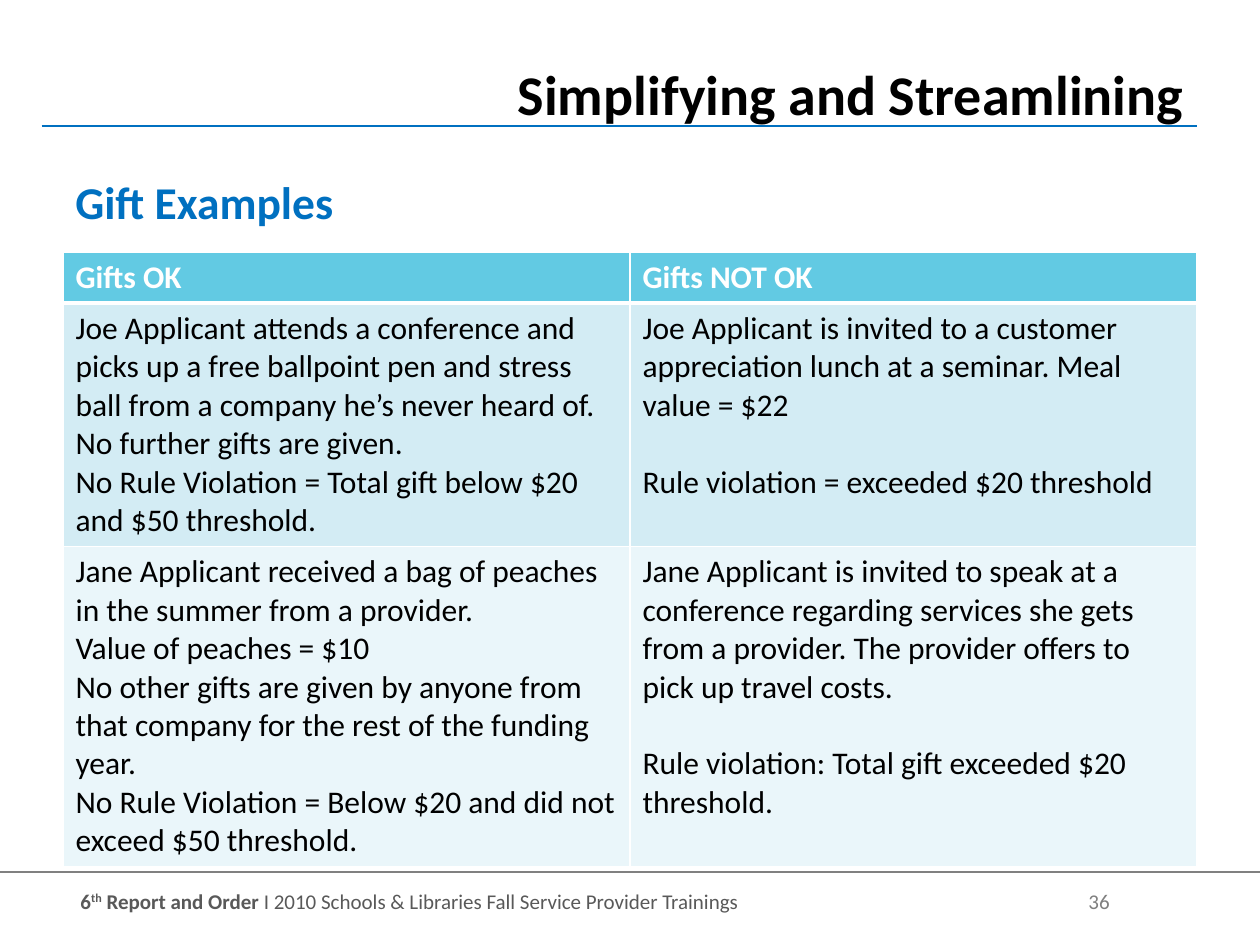
from dataclasses import dataclass

from lxml import etree
from pptx import Presentation
from pptx.dml.color import RGBColor
from pptx.enum.shapes import MSO_CONNECTOR
from pptx.enum.text import MSO_ANCHOR, MSO_AUTO_SIZE, PP_ALIGN
from pptx.oxml.ns import qn
from pptx.util import Inches, Pt

STRAIGHT = MSO_CONNECTOR.STRAIGHT
TOP = MSO_ANCHOR.TOP
NO_AUTOFIT = MSO_AUTO_SIZE.NONE
LEFT, RIGHT = PP_ALIGN.LEFT, PP_ALIGN.RIGHT
TITLE_ONLY = 5


@dataclass(frozen=True)
class Theme:
    font: str = "Calibri"
    black: str = "000000"
    white: str = "FFFFFF"
    blue: str = "0070C0"
    gray: str = "808080"
    dark_gray: str = "595959"
    row_fills: tuple = ("62CAE3", "D3ECF4", "EAF6FA")
    title_size: int = 32
    subtitle_size: int = 26
    table_size: int = 18
    footer_size: int = 12
    paragraph_gap: int = 22


THEME = Theme()

TITLE = "Simplifying and Streamlining"
SUBTITLE = "Gift Examples"

# Each cell is a list of blocks set apart by a gap; each block lists its paragraphs.
TABLE_ROWS = [
    ([["Gifts OK"]], [["Gifts NOT OK"]]),
    (
        [["Joe Applicant attends a conference and picks up a free ballpoint pen and "
          "stress ball from a company he’s never heard of. No further gifts are given.",
          "No Rule Violation = Total gift below $20 and $50 threshold."]],
        [["Joe Applicant is invited to a customer appreciation lunch at a seminar. "
          "Meal value = $22"],
         ["Rule violation = exceeded $20 threshold"]],
    ),
    (
        [["Jane Applicant received a bag of peaches in the summer from a provider.",
          "Value of peaches = $10",
          "No other gifts are given by anyone from that company for the rest of the "
          "funding year.",
          "No Rule Violation = Below $20 and did not exceed $50 threshold."]],
        [["Jane Applicant is invited to speak at a conference regarding services she "
          "gets from a provider. The provider offers to pick up travel costs."],
         ["Rule violation: Total gift exceeded $20 threshold."]],
    ),
]
ROW_HEIGHTS = (0.4, 1.93, 2.54)
TABLE_BOX = (0.5, 2, 9, sum(ROW_HEIGHTS))

# Text, colour, bold, superscript
FOOTER_RUNS = [
    ("6", THEME.dark_gray, True, False),
    ("th", THEME.dark_gray, True, True),
    (" Report and Order ", THEME.dark_gray, True, False),
    ("I 2010 Schools & Libraries Fall Service Provider Trainings\t",
     THEME.dark_gray, False, False),
    ("36", THEME.gray, False, False),
]
PAGE_NUMBER_TAB = 8

# Start x, end x, y, colour, width
RULES = [
    (0, 10, 6.92, THEME.gray, 0.75),
    (0.33, 9.5, 1, THEME.blue, 1.25),
]


def style_font(font, size, color, bold):
    font.name = THEME.font
    font.size = Pt(size)
    font.bold = bold
    font.color.rgb = RGBColor.from_string(color)


def place(shape, box):
    shape.left, shape.top, shape.width, shape.height = map(Inches, box)
    frame = shape.text_frame
    frame.word_wrap = True
    frame.auto_size = NO_AUTOFIT
    frame.vertical_anchor = TOP
    return frame.paragraphs[0]


def add_heading(shape, box, text, size, color, alignment):
    paragraph = place(shape, box)
    paragraph.text = text
    paragraph.alignment = alignment
    style_font(paragraph.font, size, color, True)


def add_rule(slide, start, end, y, color, width):
    rule = slide.shapes.add_connector(
        STRAIGHT, Inches(start), Inches(y), Inches(end), Inches(y))
    rule.line.color.rgb = RGBColor.from_string(color)
    rule.line.width = Pt(width)
    etree.SubElement(rule._element.spPr, qn("a:effectLst"))


def add_footer(slide):
    paragraph = place(slide.shapes.add_textbox(0, 0, 0, 0), (0.54, 7, 8.96, 0.34))
    properties = paragraph._p.get_or_add_pPr()
    tabs = etree.SubElement(properties, qn("a:tabLst"))
    etree.SubElement(tabs, qn("a:tab"), pos=str(Inches(PAGE_NUMBER_TAB)), algn="l")
    for text, color, bold, superscript in FOOTER_RUNS:
        run = paragraph.add_run()
        run.text = text
        style_font(run.font, THEME.footer_size, color, bold)
        if superscript:
            run._r.get_or_add_rPr().set("baseline", "30000")


def add_borders(cell, row_index):
    """Draw white edges, thicker between the header and the body."""
    widths = {
        "a:lnL": 1,
        "a:lnR": 1,
        "a:lnT": 3 if row_index == 1 else 1,
        "a:lnB": 3 if row_index == 0 else 1,
    }
    properties = cell._tc.get_or_add_tcPr()
    for tag, width in widths.items():
        line = etree.SubElement(properties, qn(tag), w=str(Pt(width)))
        fill = etree.SubElement(line, qn("a:solidFill"))
        etree.SubElement(fill, qn("a:srgbClr"), val=THEME.white)


def fill_cell(cell, blocks, row_index):
    add_borders(cell, row_index)
    cell.fill.solid()
    cell.fill.fore_color.rgb = RGBColor.from_string(THEME.row_fills[row_index])
    is_header = row_index == 0
    frame = cell.text_frame
    frame.text = "\n".join(text for block in blocks for text in block)
    for paragraph in frame.paragraphs:
        style_font(paragraph.font, THEME.table_size,
                   THEME.white if is_header else THEME.black, is_header)
    block_start = 0
    for block in blocks[:-1]:
        block_start += len(block)
        frame.paragraphs[block_start].space_before = Pt(THEME.paragraph_gap)


def add_gift_table(slide):
    table = slide.shapes.add_table(
        len(TABLE_ROWS), len(TABLE_ROWS[0]), *map(Inches, TABLE_BOX)).table
    for row_index, row in enumerate(TABLE_ROWS):
        table.rows[row_index].height = Inches(ROW_HEIGHTS[row_index])
        for column_index, blocks in enumerate(row):
            fill_cell(table.cell(row_index, column_index), blocks, row_index)


def main():
    presentation = Presentation()
    presentation.slide_width, presentation.slide_height = Inches(10), Inches(7.5)
    slide = presentation.slides.add_slide(presentation.slide_layouts[TITLE_ONLY])

    add_heading(slide.shapes.title, (3.67, 0.42, 5.83, 0.58),
                TITLE, THEME.title_size, THEME.black, RIGHT)
    add_footer(slide)
    for rule in RULES:
        add_rule(slide, *rule)
    add_gift_table(slide)
    add_heading(slide.shapes.add_textbox(0, 0, 0, 0), (0.5, 1.33, 9, 0.67),
                SUBTITLE, THEME.subtitle_size, THEME.blue, LEFT)

    presentation.save("out.pptx")


if __name__ == "__main__":
    main()
